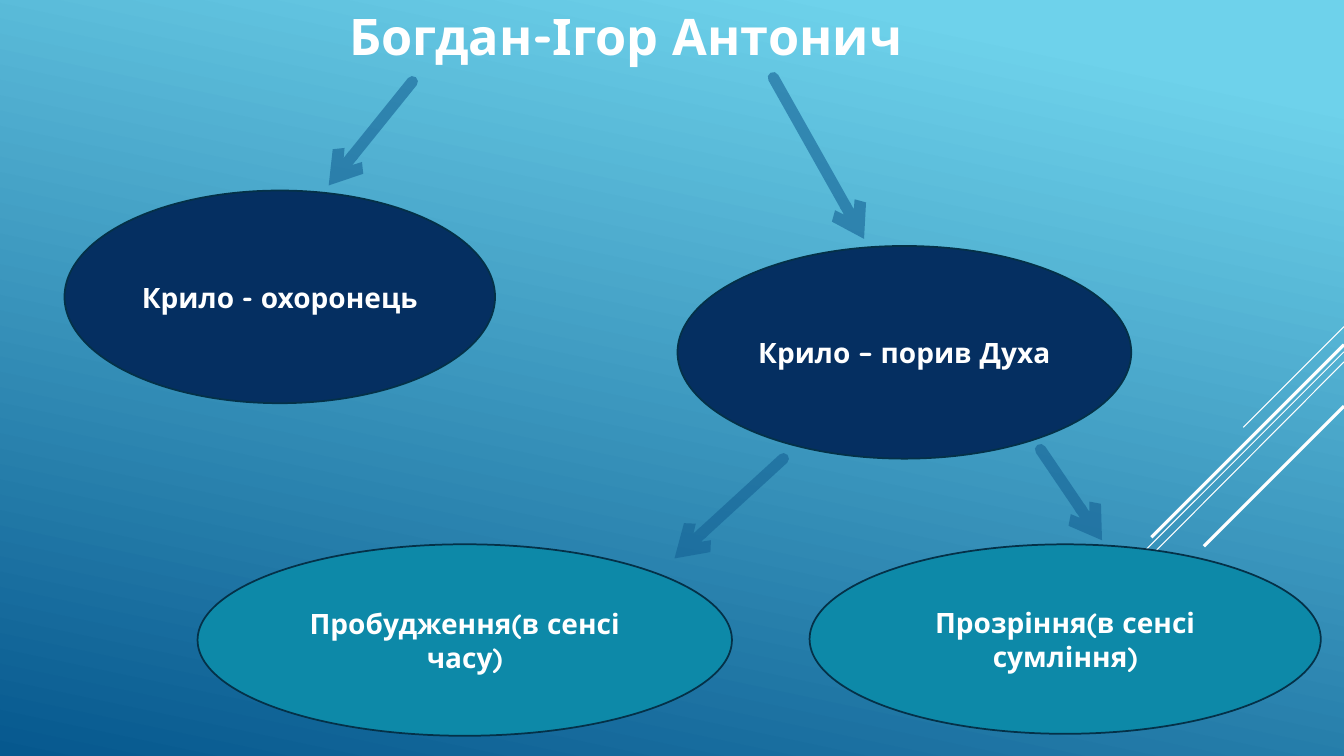
from dataclasses import dataclass

from lxml.etree import SubElement
from pptx import Presentation
from pptx.dml.color import RGBColor
from pptx.enum.dml import MSO_LINE
from pptx.enum.shapes import MSO_CONNECTOR, MSO_SHAPE
from pptx.enum.text import MSO_ANCHOR, PP_ALIGN
from pptx.oxml.ns import qn
from pptx.shapes.connector import Connector
from pptx.slide import Slide
from pptx.text.text import TextFrame
from pptx.util import Inches, Pt

COLORS = {
    "sky": "6ED2EB",
    "deep": "06588E",
    "white": "FFFFFF",
    "arrow": "146194",
    "navy": "052F61",
    "teal": "0D89A8",
    "outline": "043148",
}
FONT = "Quicksand"


@dataclass(frozen=True)
class Stroke:
    start: tuple[float, float]
    end: tuple[float, float]
    width: float
    color: str = "white"


@dataclass(frozen=True)
class Bubble:
    text: str
    left: float
    top: float
    width: float
    height: float
    fill: str


STRIPES = [
    Stroke((13.33, 3.24), (12.33, 4.24), 0.75),
    Stroke((13.33, 3.49), (10.07, 6.75), 0.75),
    Stroke((13.33, 3.59), (11.26, 5.67), 0.75),
    Stroke((13.33, 3.42), (11.42, 5.33), 2.25),
    Stroke((13.33, 4.03), (11.94, 5.42), 2.25),
]
BUBBLES = [
    Bubble("Крило - охоронець", 0.64, 1.89, 4.27, 2.11, "navy"),
    Bubble("Крило – порив Духа", 6.72, 2.44, 4.5, 2.11, "navy"),
    Bubble("Пробудження(в сенсі часу)", 1.96, 5.4, 5.3, 1.9, "teal"),
    Bubble("Прозріння(в сенсі сумління)", 8.03, 5.4, 5.07, 1.88, "teal"),
]
ARROWS = [
    Stroke((4.09, 0.81), (3.26, 1.84), 8, "arrow"),
    Stroke((7.67, 0.77), (8.57, 2.37), 8, "arrow"),
    Stroke((7.77, 4.55), (6.69, 5.54), 8, "arrow"),
    Stroke((10.32, 4.46), (10.93, 5.36), 8, "arrow"),
]


def rgb(name: str) -> RGBColor:
    return RGBColor.from_string(COLORS[name])


def write_text(frame: TextFrame, text: str, *, size: float, anchor: MSO_ANCHOR) -> None:
    frame.word_wrap = True
    frame.vertical_anchor = anchor
    para = frame.paragraphs[0]
    para.alignment = PP_ALIGN.CENTER
    span = para.add_run()
    span.text = text
    span.font.name = FONT
    span.font.size = Pt(size)
    span.font.bold = True
    span.font.color.rgb = rgb("white")


def paint_background(page: Slide) -> None:
    fill = page.background.fill
    fill.gradient()
    fill.gradient_angle = 360 - 102
    for stop, (position, color) in zip(fill.gradient_stops, [(0.1, "sky"), (1, "deep")]):
        stop.position = position
        stop.color.rgb = rgb(color)


def draw_stroke(page: Slide, stroke: Stroke) -> Connector:
    ends = [Inches(value) for value in (*stroke.start, *stroke.end)]
    connector = page.shapes.add_connector(MSO_CONNECTOR.STRAIGHT, *ends)
    connector.line.width = Pt(stroke.width)
    connector.line.color.rgb = rgb(stroke.color)
    SubElement(connector._element.spPr, qn("a:effectLst"))
    return connector


def draw_arrow(page: Slide, stroke: Stroke) -> None:
    connector = draw_stroke(page, stroke)
    connector.line.dash_style = MSO_LINE.SOLID
    outline = connector._element.spPr.find(qn("a:ln"))
    outline.set("cap", "rnd")
    color = outline.find(qn("a:solidFill")).find(qn("a:srgbClr"))
    SubElement(color, qn("a:alpha"), val="60000")
    SubElement(outline, qn("a:round"))
    SubElement(outline, qn("a:tailEnd"), type="arrow")


def draw_bubble(page: Slide, bubble: Bubble) -> None:
    place = [Inches(value) for value in (bubble.left, bubble.top, bubble.width, bubble.height)]
    shape = page.shapes.add_shape(MSO_SHAPE.OVAL, *place)
    shape.shadow.inherit = False
    shape.fill.solid()
    shape.fill.fore_color.rgb = rgb(bubble.fill)
    shape.line.color.rgb = rgb("outline")
    shape.line.width = Pt(1.25)
    write_text(shape.text_frame, bubble.text, size=20, anchor=MSO_ANCHOR.MIDDLE)


def main() -> None:
    deck = Presentation()
    deck.slide_width = Inches(13.33)
    deck.slide_height = Inches(7.5)
    page = deck.slides.add_slide(deck.slide_layouts[5])
    paint_background(page)

    title = page.shapes.title
    title.left, title.top = Inches(3.13), Inches(0)
    title.width, title.height = Inches(6.16), Inches(0.71)
    write_text(title.text_frame, "Богдан-Ігор Антонич", size=36, anchor=MSO_ANCHOR.TOP)

    for stripe in STRIPES:
        draw_stroke(page, stripe)
    for bubble in BUBBLES:
        draw_bubble(page, bubble)
    for arrow in ARROWS:
        draw_arrow(page, arrow)
    deck.save("out.pptx")


if __name__ == "__main__":
    main()
